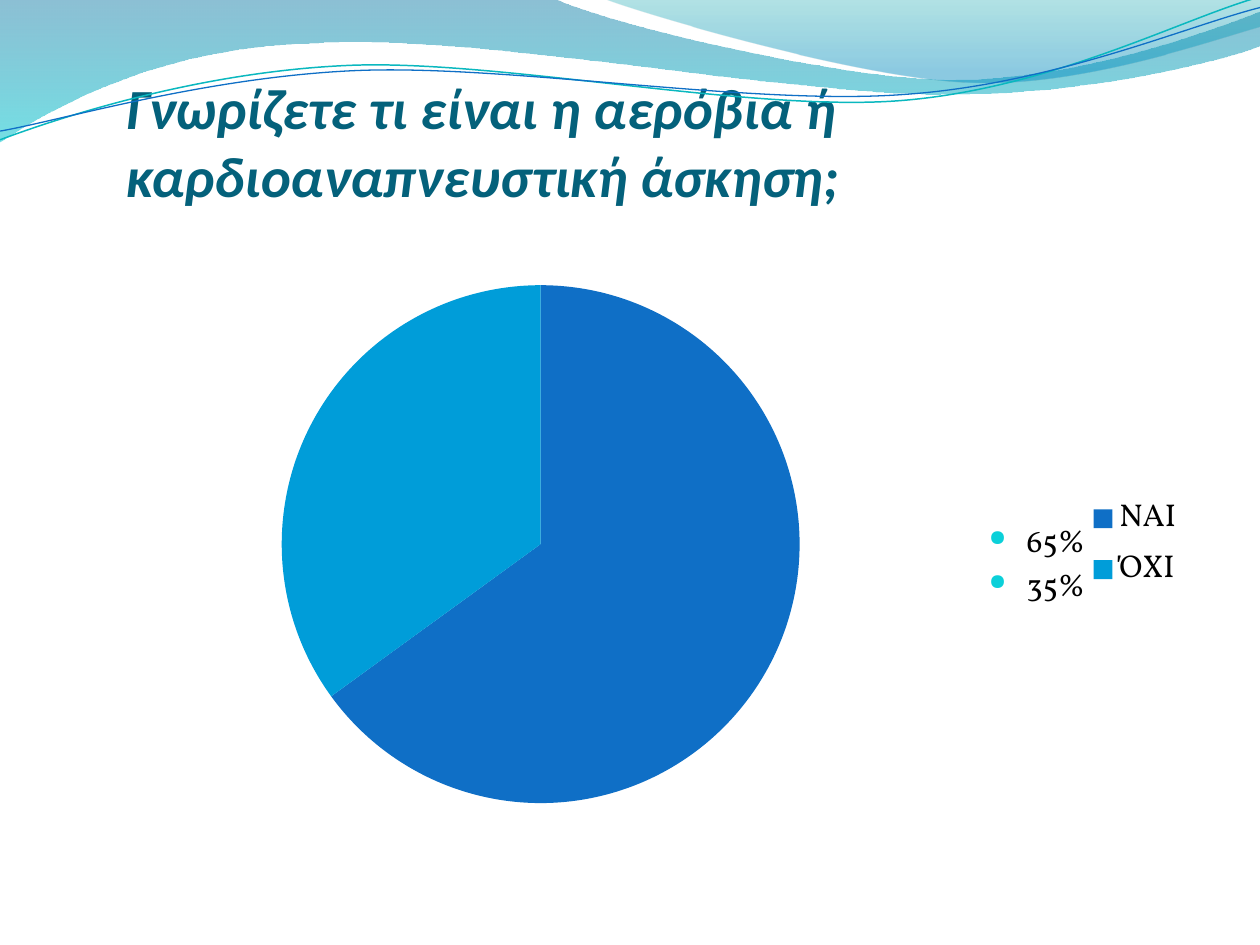
"""Builds the survey slide on aerobic exercise, with its wave header and pie chart."""
from lxml import etree
from pptx import Presentation
from pptx.chart.data import CategoryChartData
from pptx.dml.color import RGBColor
from pptx.enum import chart as ch, text
from pptx.oxml import ns, parse_xml
from pptx.util import Pt

NAVY = RGBColor(0x04, 0x61, 0x7B)
BLUE = RGBColor(0x0F, 0x6F, 0xC6)
SKY = RGBColor(0x00, 0x9D, 0xD9)
CYAN = RGBColor(0x0B, 0xD0, 0xD9)
TEAL = RGBColor(0x0A, 0xB8, 0xBF)
BLACK = RGBColor(0, 0, 0)
WAVE_STOPS = [(0, RGBColor(0x00, 0x74, 0xA1), 45), (1, RGBColor(0x00, 0xC6, 0xCF), 55)]
CREST_STOPS = [(0, RGBColor(0x00, 0xA1, 0xA9), 30), (0.8, RGBColor(0x00, 0x8B, 0xBF), 45)]

WAVE = [(0, 0), (316.8, -0.7), (342.7, 12.2, 478.1, 45.4, 545.8, 45.4),
        (614.2, 45.4, 689.8, 18.7, 720, 6.5), (720.7, 25.9),
        (707.8, 31.7, 626.4, 54.7, 537.1, 54), (447.8, 54, 275, 20.2, 185, 24.5),
        (92.9, 25.9, 33.1, 59.8, -0.7, 81.4)]
CREST = [(344.9, -0.7), (366.5, 7.9, 491, 44.6, 553.7, 46.8),
         (616.3, 49.7, 691.9, 23, 720, 15.1), (720, 0)]
TEAL_LINE = [(0, 79.9), (34.6, 67, 113.8, 41, 199.4, 37.4),
             (284.4, 33.8, 427, 64.1, 513.4, 57.6), (599.8, 51.1, 675.4, 10.8, 718.6, -1.4)]
BLUE_LINE = [(0, 74.9), (33.8, 69.1, 118.1, 43.9, 203.8, 40.3),
             (290.2, 36.7, 429.8, 60.5, 516.2, 54), (601.9, 48.2, 677.5, 15.1, 720, 4.3)]


class Deck:
    """Holds the style and the current slide."""

    heading, body, size = "Calibri", "Vollkorn", 18

    def __init__(self, width, height):
        """Start a presentation with one title-only slide."""
        self.prs = Presentation()
        self.prs.slide_width, self.prs.slide_height = Pt(width), Pt(height)
        self.s = self.prs.slides.add_slide(self.prs.slide_layouts[5])

    def font(self, f, name, size, color):
        """Set the face, size and colour of a font."""
        f.name, f.size, f.color.rgb = name, Pt(size), color

    def outline(self, segs, close):
        """Draw a freeform of lines and cubic curves without shadow."""
        pts = [(Pt(seg[i]), Pt(seg[i + 1])) for seg in segs for i in range(0, len(seg), 2)]
        fb = self.s.shapes.build_freeform(*pts[0], scale=1.0)
        fb.add_line_segments(pts[1:], close=close)
        sp = fb.convert_to_shape()
        sp.shadow.inherit = False
        lines = iter(list(sp._element.iter(ns.qn("a:lnTo"))))
        for seg in segs[1:]:
            first = next(lines)
            if len(seg) == 6:
                first.tag = ns.qn("a:cubicBezTo")
                for extra in (next(lines), next(lines)):
                    first.append(extra[0])
                    extra.getparent().remove(extra)
        return sp

    def band(self, segs, stops):
        """Draw a closed shape with a translucent vertical gradient."""
        sp = self.outline(segs, True)
        sp.line.fill.background()
        sp.fill.gradient()
        sp.fill.gradient_angle = 270
        for stop, (pos, color, _) in zip(sp.fill.gradient_stops, stops):
            stop.position, stop.color.rgb = pos, color
        colors = sp._element.spPr.iter(ns.qn("a:srgbClr"))
        for clr, (_, _, alpha) in zip(colors, stops):
            etree.SubElement(clr, ns.qn("a:alpha"), val=str(alpha * 1000))

    def curve(self, segs, color, width):
        """Draw an open curve."""
        sp = self.outline(segs, False)
        sp.fill.background()
        sp.line.color.rgb, sp.line.width = color, Pt(width)

    def title(self, words, x, y, w, h):
        """Place and format the title."""
        sp = self.s.shapes.title
        sp.left, sp.top, sp.width, sp.height = Pt(x), Pt(y), Pt(w), Pt(h)
        tf = sp.text_frame
        tf.auto_size, tf.word_wrap = text.MSO_AUTO_SIZE.NONE, True
        tf.vertical_anchor = text.MSO_ANCHOR.BOTTOM
        tf.margin_left = tf.margin_right = tf.margin_bottom = 0
        p = tf.paragraphs[0]
        p.alignment = text.PP_ALIGN.LEFT
        r = p.add_run()
        r.text = words
        self.font(r.font, self.heading, 32.4, NAVY)
        r.font.bold = r.font.italic = True

    def pie(self, cats, vals, colors, frame, plot):
        """Add a pie chart with a legend on the right and a square plot (x, y, side)."""
        data = CategoryChartData()
        data.categories = cats
        data.add_series("Series 1", vals)
        chart = self.s.shapes.add_chart(
            ch.XL_CHART_TYPE.PIE, *map(Pt, frame), data).chart
        self.font(chart.font, self.body, self.size, BLACK)
        chart.has_title = False
        chart.has_legend = True
        chart.legend.position = ch.XL_LEGEND_POSITION.RIGHT
        chart.legend.include_in_layout = False
        for i, color in enumerate(colors):
            fill = chart.plots[0].series[0].points[i].format.fill
            fill.solid()
            fill.fore_color.rgb = color
        area = chart._chartSpace.chart.plotArea
        for old in area.findall(ns.qn("c:layout")):
            area.remove(old)
        (x, y, side), (w, h) = plot, frame[2:]
        box = {"xMode": "edge", "yMode": "edge",
               "x": x / w, "y": y / h, "w": side / w, "h": side / h}
        parts = "".join(f'<c:{k} val="{v}"/>' for k, v in box.items())
        area.insert(0, parse_xml(
            f'<c:layout {ns.nsdecls("c")}><c:manualLayout><c:layoutTarget val="inner"/>'
            f'{parts}</c:manualLayout></c:layout>'))

    def bullets(self, items, x, y, w, h):
        """Add a bulleted list."""
        tf = self.s.shapes.add_textbox(Pt(x), Pt(y), Pt(w), Pt(h)).text_frame
        tf.word_wrap = True
        for i, item in enumerate(items):
            p = tf.add_paragraph() if i else tf.paragraphs[0]
            p.space_before = Pt(3.6)
            pPr = p._p.get_or_add_pPr()
            pPr.set("marL", str(Pt(21.6)))
            pPr.set("indent", str(-Pt(21.6)))
            clr = etree.SubElement(pPr, ns.qn("a:buClr"))
            etree.SubElement(clr, ns.qn("a:srgbClr"), val=str(CYAN))
            etree.SubElement(pPr, ns.qn("a:buSzPct"), val="70000")
            etree.SubElement(pPr, ns.qn("a:buChar"), char="●")
            r = p.add_run()
            r.text = item
            self.font(r.font, self.body, self.size, BLACK)


def main():
    """Build and save the slide."""
    deck = Deck(720, 540)
    deck.band(WAVE, WAVE_STOPS)
    deck.band(CREST, CREST_STOPS)
    deck.curve(TEAL_LINE, TEAL, 0.85)
    deck.curve(BLUE_LINE, BLUE, 0.75)
    deck.title("Γνωρίζετε τι είναι η αερόβια ή καρδιοαναπνευστική άσκηση;", 72, 41.5, 648, 78)
    deck.pie(["ΝΑΙ", "ΌΧΙ"], [65, 35], [BLUE, SKY], (0, 132, 684, 358), (161, 31, 296))
    deck.bullets(["65%", "35%"], 558, 294, 84, 81)
    deck.prs.save("out.pptx")


if __name__ == "__main__":
    main()
